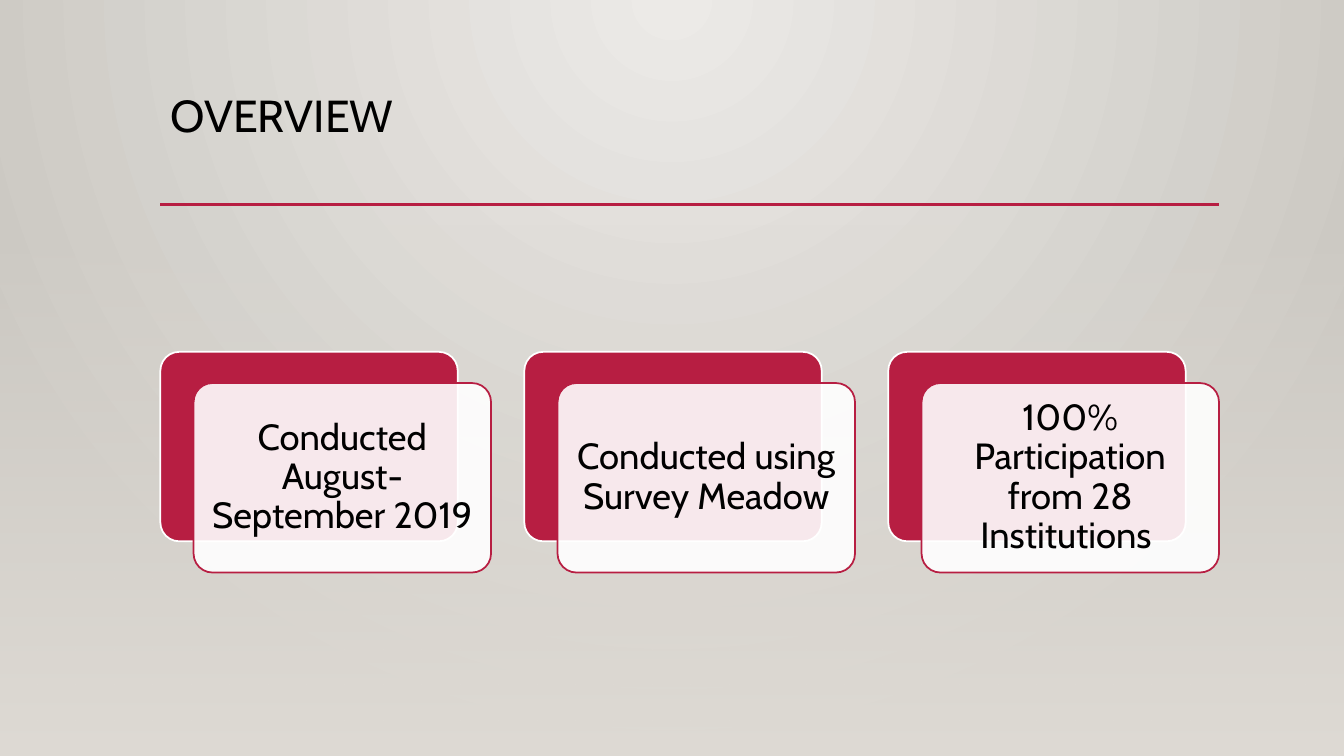
from lxml import etree
from pptx import Presentation
from pptx import util as u
from pptx.dml.color import RGBColor
from pptx.enum import shapes, text
from pptx.oxml.ns import qn

TITLE = "OVERVIEW"
FACTS = [
    "Conducted August-September 2019",
    "Conducted using Survey Meadow",
    "100% Participation from 28 Institutions ",
]
FONT = "Cabin"
RED, WHITE, BLACK = "B71E42", "FFFFFF", "000000"
GLOW = ("ECEAE7", "CAC7C1")
HAZE = ("DFDBD5", "DFDBD5")

WIDTH, HEIGHT = 13.33, 7.5
LEFT, CONTENT_WIDTH = 1.59, 10.5
RULE_TOP, HAZE_TOP, CARD_TOP = 2.03, 2.21, 3.49
CARD_WIDTH, CARD_HEIGHT = 2.95, 1.88
SHIFT_X, SHIFT_Y = 0.33, 0.31
CARD_INSET = 0.11
PITCH = (CONTENT_WIDTH - CARD_WIDTH - SHIFT_X) / (len(FACTS) - 1)


def color(value):
    return RGBColor.from_string(value)


def add_alpha(holder, percent):
    rgb = next(holder.iter(qn("a:srgbClr")))
    etree.SubElement(rgb, qn("a:alpha"), val=str(percent * 1000))


def paint_gradient(fill, holder, colors, circle):
    fill.gradient()
    for stop, position, value in zip(fill.gradient_stops, (0, 1), colors):
        stop.position = position
        stop.color.rgb = color(value)
    gradient = next(holder.iter(qn("a:gradFill")))
    if circle:
        gradient.remove(gradient.find(qn("a:lin")))
        shade = etree.SubElement(gradient, qn("a:path"), {"path": "circle"})
        etree.SubElement(shade, qn("a:fillToRect"), l="43000", t="0", r="43000", b="100000")
    else:
        fill.gradient_angle = 270
        add_alpha(gradient, 0)


def add_box(page, kind, left, top, width, height):
    box = page.shapes.add_shape(kind, *map(u.Inches, (left, top, width, height)))
    box.shadow.inherit = False
    return box


def add_panel(page, title, top, colors, circle):
    panel = add_box(page, shapes.MSO_SHAPE.RECTANGLE, 0, top, WIDTH, HEIGHT - top)
    paint_gradient(panel.fill, panel.element, colors, circle)
    panel.line.fill.background()
    title.element.addprevious(panel.element)


def add_card(page, left, top, fill, line):
    card = add_box(page, shapes.MSO_SHAPE.ROUNDED_RECTANGLE, left, top, CARD_WIDTH, CARD_HEIGHT)
    card.adjustments[0] = 0.1
    card.fill.solid()
    card.fill.fore_color.rgb = color(fill)
    card.line.color.rgb = color(line)
    card.line.width = u.Pt(1.25)
    return card


def write(frame, words, size, align, anchor):
    frame.word_wrap = True
    frame.auto_size = text.MSO_AUTO_SIZE.NONE
    frame.vertical_anchor = anchor
    para = frame.paragraphs[0]
    para.text = words
    para.alignment = align
    para.line_spacing = 0.9
    para.font.name = FONT
    para.font.size = u.Pt(size)
    para.font.color.rgb = color(BLACK)


def add_title(page):
    title = page.shapes.title
    title.left, title.top = u.Inches(LEFT), u.Inches(0.88)
    title.width, title.height = u.Inches(CONTENT_WIDTH), u.Inches(1.15)
    write(title.text_frame, TITLE, 32, text.PP_ALIGN.LEFT, text.MSO_ANCHOR.TOP)
    return title


def add_rule(page):
    ends = (LEFT, RULE_TOP, LEFT + CONTENT_WIDTH, RULE_TOP)
    rule = page.shapes.add_connector(shapes.MSO_CONNECTOR.STRAIGHT, *map(u.Inches, ends))
    rule.line.color.rgb = color(RED)
    rule.line.width = u.Pt(2.5)
    etree.SubElement(rule.element.spPr, qn("a:effectLst"))


def add_fact(page, index, words):
    left = LEFT + index * PITCH
    add_card(page, left, CARD_TOP, RED, WHITE)
    front = add_card(page, left + SHIFT_X, CARD_TOP + SHIFT_Y, WHITE, RED)
    add_alpha(front.element.spPr, 90)
    frame = front.text_frame
    frame.margin_left = frame.margin_right = u.Inches(CARD_INSET)
    frame.margin_top = frame.margin_bottom = u.Inches(CARD_INSET)
    write(frame, words, 26, text.PP_ALIGN.CENTER, text.MSO_ANCHOR.MIDDLE)


def main():
    deck = Presentation()
    deck.slide_width, deck.slide_height = u.Inches(WIDTH), u.Inches(HEIGHT)
    page = deck.slides.add_slide(deck.slide_layouts[5])
    paint_gradient(page.background.fill, page.element, GLOW, True)
    title = add_title(page)
    add_panel(page, title, 0, GLOW, True)
    add_panel(page, title, HAZE_TOP, HAZE, False)
    add_rule(page)
    for index, words in enumerate(FACTS):
        add_fact(page, index, words)
    deck.save("out.pptx")


if __name__ == "__main__":
    main()
